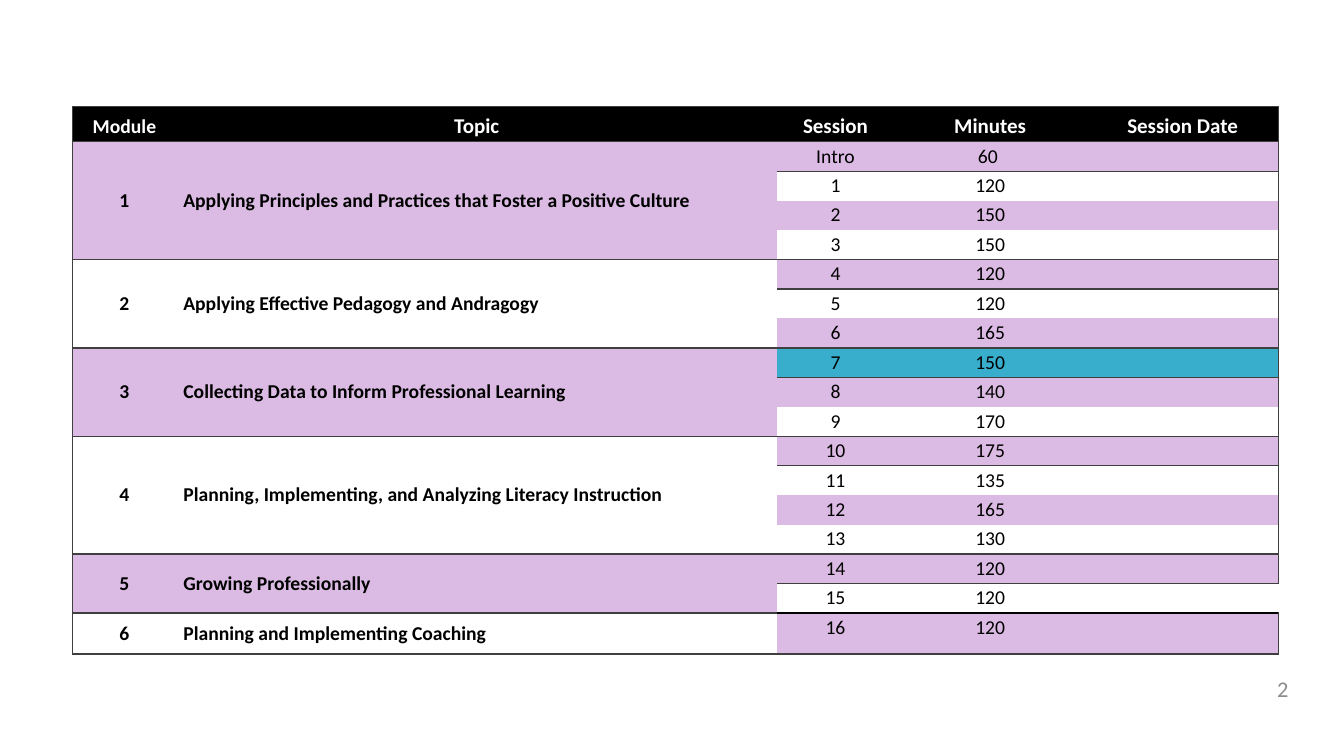
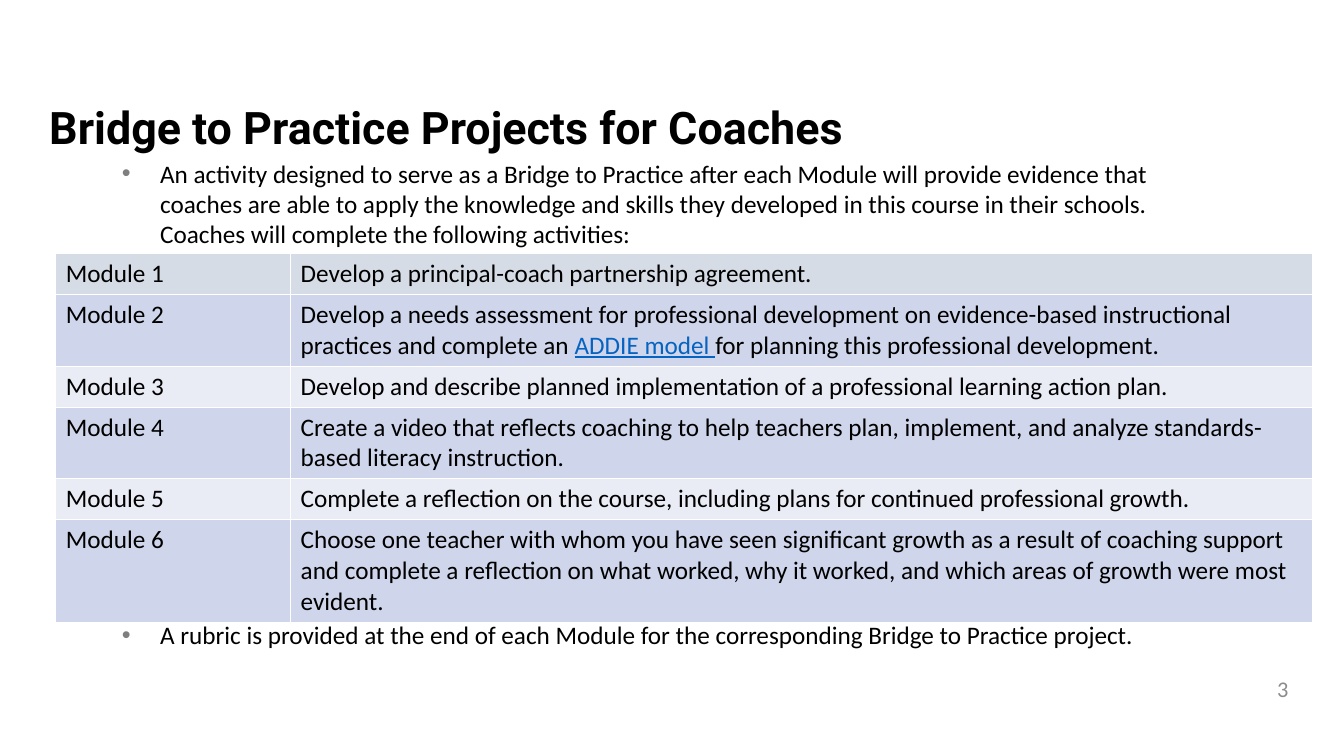
from lxml import etree
from pptx import Presentation
from pptx.dml.color import RGBColor
from pptx.enum import text as text_enum
from pptx.oxml import ns
from pptx.util import Pt

COLORS = {
    "black": "000000", "white": "FFFFFF", "rule": "3F3F3F", "lilac": "DBBBE3",
    "highlight": "38AECC", "number": "8C8C8C", "bullet": "7F7F7F",
    "link": "0563C1", "first": "D6DCE5", "dark": "CFD5EA", "light": "E9EBF5",
}
HEADINGS = ["Module", "Topic", "Session", "Minutes", "Session Date"]
MODULES = [
    ("Applying Principles and Practices that Foster a Positive Culture",
     [("Intro", "60 "), ("1", "120"), ("2", "150"), ("3", "150")]),
    ("Applying Effective Pedagogy and Andragogy",
     [("4", "120"), ("5", "120"), ("6", "165")]),
    ("Collecting Data to Inform Professional Learning",
     [("7", "150"), ("8", "140"), ("9", "170")]),
    ("Planning, Implementing, and Analyzing Literacy Instruction",
     [("10", "175"), ("11", "135"), ("12", "165"), ("13", "130")]),
    ("Growing Professionally", [("14", "120"), ("15", "120")]),
    ("Planning and Implementing Coaching", [("16", "120")]),
]
HIGHLIGHTED = "7"
UNRULED = "15"
TITLE = "Bridge to Practice Projects for Coaches"
INTRO = ("An activity designed to serve as a Bridge to Practice after each Module will provide "
         "evidence that coaches are able to apply the knowledge and skills they developed in this "
         "course in their schools. Coaches will complete the following activities:")
RUBRIC = ("A rubric is provided at the end of each Module for the corresponding "
          "Bridge to Practice project.")
ACTIVITIES = [
    (["Develop a principal-coach partnership agreement."], 1),
    (["Develop a needs assessment for professional development on evidence-based instructional "
      "practices and complete an ", ("ADDIE model ", "link"),
      "for planning this professional development."], 2),
    (["Develop and describe planned implementation of a professional learning action plan."], 1),
    (["Create a video that reflects coaching to help teachers plan, implement, and analyze "
      "standards-based literacy instruction."], 2),
    (["Complete a reflection on the course, including plans for continued professional growth."], 1),
    (["Choose one teacher with whom you have seen significant growth as a result of coaching "
      "support and complete a reflection on what worked, why it worked, and which areas of growth "
      "were most evident."], 3),
]
PLAIN_TABLE = "{2D5ABB26-0587-4C30-8999-92F81FD0307C}"
ALIGN = text_enum.PP_ALIGN
ANCHOR = text_enum.MSO_ANCHOR


def rgb(name):
    return RGBColor.from_string(COLORS[name])


def write(frame, content, size=18, color="black", bold=False, font="Calibri",
          align=ALIGN.LEFT, bullet=False):
    para = frame.paragraphs[0]
    para.alignment = align
    if bullet:
        props = para._p.get_or_add_pPr()
        props.set("marL", str(Pt(27.4)))
        props.set("indent", str(-Pt(27.4)))
        tint = etree.SubElement(props, ns.qn("a:buClr"))
        etree.SubElement(tint, ns.qn("a:srgbClr"), val=COLORS["bullet"])
        etree.SubElement(props, ns.qn("a:buFont"), typeface="Arial")
        etree.SubElement(props, ns.qn("a:buChar"), char="•")
    if not content:
        etree.SubElement(para._p, ns.qn("a:endParaRPr"), sz=str(size * 100))
    for part in [content] if isinstance(content, str) else content:
        if not part:
            continue
        words, tint = (part, color) if isinstance(part, str) else part
        span = para.add_run()
        span.text = words
        span.font.name = font
        span.font.size = Pt(size)
        span.font.bold = bold
        span.font.color.rgb = rgb(tint)
        if tint == "link":
            span.font.underline = True


def add_text(page, area, content, anchor=ANCHOR.TOP, **style):
    box = page.shapes.add_textbox(*map(Pt, area))
    box.text_frame.word_wrap = True
    box.text_frame.vertical_anchor = anchor
    write(box.text_frame, content, **style)


def add_grid(page, left, top, widths, heights):
    frame = page.shapes.add_table(len(heights), len(widths), Pt(left), Pt(top),
                                  Pt(sum(widths)), Pt(sum(heights)))
    grid = frame.table
    grid.first_row = grid.horz_banding = False
    grid._tbl.tblPr.find(ns.qn("a:tableStyleId")).text = PLAIN_TABLE
    for column, width in zip(grid.columns, widths):
        column.width = Pt(width)
    for row, height in zip(grid.rows, heights):
        row.height = Pt(height)
    return grid


def format_cell(cell, content, fill, borders, insets=(7.2, 3.6), anchor=ANCHOR.TOP, **style):
    cell.margin_left = cell.margin_right = Pt(insets[0])
    cell.margin_top = cell.margin_bottom = Pt(insets[1])
    cell.vertical_anchor = anchor
    for side in "LRTB":
        if side in borders:
            line = etree.SubElement(cell._tc.get_or_add_tcPr(), ns.qn("a:ln" + side),
                                    w=str(Pt(1)))
            paint = etree.SubElement(line, ns.qn("a:solidFill"))
            etree.SubElement(paint, ns.qn("a:srgbClr"), val=COLORS[borders[side]])
    cell.fill.solid()
    cell.fill.fore_color.rgb = rgb(fill)
    write(cell.text_frame, content, **style)


def add_page(deck, number):
    page = deck.slides.add_slide(deck.slide_layouts[6])
    add_text(page, (759.6, 481, 167.8, 21.6), str(number), anchor=ANCHOR.MIDDLE,
             size=16, color="number", align=ALIGN.RIGHT)
    return page


def build_schedule(deck):
    page = add_page(deck, 2)
    count = sum(len(sessions) for _, sessions in MODULES)
    grid = add_grid(page, 51.8, 76.3, [74.2, 429.1, 83.5, 137.5, 137.5],
                    [25] + [21.05] * (count - 1) + [29.3])
    last_column = len(HEADINGS) - 1
    for column, heading in enumerate(HEADINGS):
        borders = {"T": "rule", "B": "rule"}
        if column in (0, last_column):
            borders["R" if column else "L"] = "rule"
        format_cell(grid.cell(0, column), heading, "black", borders, (4.3, 1.9),
                    ANCHOR.BOTTOM, size=15 if column else 14, color="white",
                    bold=True, align=ALIGN.CENTER)
    row = 1
    for index, (topic, sessions) in enumerate(MODULES):
        end = row + len(sessions) - 1
        for column in (0, 1):
            if end > row:
                grid.cell(row, column).merge(grid.cell(end, column))
        for line, (session, minutes) in enumerate(sessions, row):
            labels = (str(index + 1), topic) if line == row else ("", "")
            for column, label in enumerate((*labels, session, minutes, "")):
                is_label = column < 2
                borders = {}
                if line == row or is_label:
                    after_gap = line == count and not is_label
                    borders["T"] = "black" if after_gap else "rule"
                if line == end or is_label:
                    before_gap = session == UNRULED and not is_label
                    borders["B"] = "black" if before_gap else "rule"
                if column == 0:
                    borders["L"] = "rule"
                if column == last_column and session != UNRULED:
                    borders["R"] = "rule"
                banded = index if is_label else line - 1
                fill = "white" if banded % 2 else "lilac"
                if session == HIGHLIGHTED and not is_label:
                    fill = "highlight"
                format_cell(grid.cell(line, column), label, fill, borders,
                            (5, 0 if column == 0 else 1.9) if is_label else (4.3, 1.9),
                            ANCHOR.MIDDLE if is_label else ANCHOR.TOP, size=14, bold=is_label,
                            align=ALIGN.LEFT if column == 1 else ALIGN.CENTER)
        row = end + 1


def build_projects(deck):
    page = add_page(deck, 3)
    add_text(page, (28.1, 56.9, 653, 67.7), TITLE, anchor=ANCHOR.MIDDLE,
             size=32, bold=True, font="Roboto")
    add_text(page, (79.9, 109.4, 766.8, 73), INTRO, bullet=True)
    add_text(page, (79.9, 439, 766.8, 29.2), RUBRIC, bullet=True)
    grid = add_grid(page, 39.8, 181.2, [167.8, 729.8],
                    [7.3 + 21.95 * lines for _, lines in ACTIVITIES])
    borders = dict.fromkeys("LRTB", "white")
    for row, (activity, _) in enumerate(ACTIVITIES):
        fill = "first" if row == 0 else "dark" if row % 2 else "light"
        for column, content in enumerate((f"Module {row + 1}", activity)):
            format_cell(grid.cell(row, column), content, fill, borders)


def main():
    deck = Presentation()
    deck.slide_width, deck.slide_height = Pt(960), Pt(540)
    build_schedule(deck)
    build_projects(deck)
    deck.save("out.pptx")


if __name__ == "__main__":
    main()
